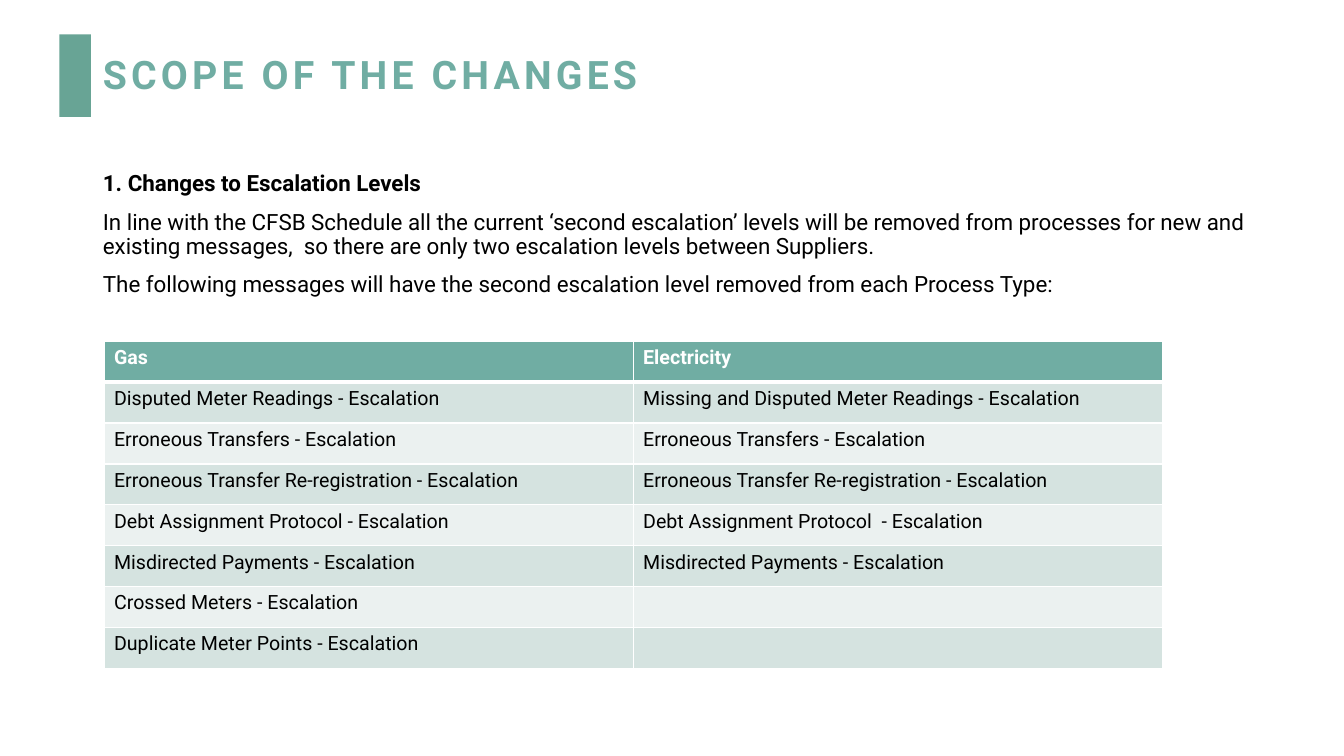
from itertools import zip_longest

from pptx import Presentation
from pptx.dml.color import RGBColor
from pptx.enum.shapes import MSO_SHAPE as Shape
from pptx.enum.text import MSO_ANCHOR as Anchor, MSO_AUTO_SIZE as AutoSize, PP_ALIGN as Align
from pptx.oxml import parse_xml
from pptx.oxml.ns import nsdecls
from pptx.util import Cm, Pt

TEAL = "70ADA3"
BAR_GREEN = "68A495"
BAND_DARK = "D5E3E0"
BAND_LIGHT = "EBF1F0"
WHITE = "FFFFFF"
BLACK = "000000"

GAS = [
    "Disputed Meter Readings - Escalation",
    "Erroneous Transfers - Escalation",
    "Erroneous Transfer Re-registration - Escalation",
    "Debt Assignment Protocol - Escalation",
    "Misdirected Payments - Escalation",
    "Crossed Meters - Escalation",
    "Duplicate Meter Points - Escalation",
]
ELECTRICITY = [
    "Missing and Disputed Meter Readings - Escalation",
    "Erroneous Transfers - Escalation",
    "Erroneous Transfer Re-registration - Escalation",
    "Debt Assignment Protocol  - Escalation",
    "Misdirected Payments - Escalation",
]
SCOPE = [
    "1. Changes to Escalation Levels",
    "In line with the CFSB Schedule all the current ‘second escalation’ levels will be "
    "removed from processes for new and existing messages,  so there are only two "
    "escalation levels between Suppliers.",
    "The following messages will have the second escalation level removed from each "
    "Process Type:",
]


def color(value):
    return RGBColor.from_string(value)


class ScopeSlide:
    font_name = "Roboto"

    def __init__(self, deck):
        self.slide = deck.slides.add_slide(deck.slide_layouts[1])

    def place(self, shape, left, top, width, height):
        shape.left, shape.top = Cm(left), Cm(top)
        shape.width, shape.height = Cm(width), Cm(height)

    def style(self, paragraph, size, ink, bold=False):
        font = paragraph.font
        font.name, font.size, font.bold = self.font_name, Pt(size), bold
        font.color.rgb = color(ink)

    def bar(self, left, top, width, height):
        bar = self.slide.shapes.add_shape(
            Shape.RECTANGLE, Cm(left), Cm(top), Cm(width), Cm(height))
        bar.shadow.inherit = False
        bar.fill.solid()
        bar.fill.fore_color.rgb = color(BAR_GREEN)
        bar.line.fill.background()

    def title(self, text, *box):
        title = self.slide.shapes.title
        self.place(title, *box)
        frame = title.text_frame
        frame.text = text
        frame.auto_size = AutoSize.NONE
        frame.vertical_anchor = Anchor.MIDDLE
        heading = frame.paragraphs[0]
        heading.alignment = Align.LEFT
        heading.line_spacing = 0.9
        self.style(heading, 28, TEAL, True)
        heading.runs[0].font._element.set("spc", "300")

    def body(self, texts, *box):
        body = self.slide.placeholders[1]
        self.place(body, *box)
        frame = body.text_frame
        frame.text = "\n".join(texts)
        frame.auto_size = AutoSize.NONE
        for index, paragraph in enumerate(frame.paragraphs):
            properties = paragraph._p.get_or_add_pPr()
            properties.set("marL", "0")
            properties.set("indent", "0")
            properties.append(parse_xml(f"<a:buNone {nsdecls('a')}/>"))
            paragraph.line_spacing = 0.9
            paragraph.space_before = Pt(10 if index else 0)
            self.style(paragraph, 16, BLACK, bold=index == 0)

    def borders(self, cell, **widths):
        properties = cell._tc.get_or_add_tcPr()
        for side in "LRTB":
            width = Pt(widths.get(side, 1))
            properties.append(parse_xml(
                f'<a:ln{side} {nsdecls("a")} w="{width}"><a:solidFill>'
                f'<a:srgbClr val="{WHITE}"/></a:solidFill></a:ln{side}>'))

    def table(self, rows, left, top, width, height):
        table = self.slide.shapes.add_table(
            len(rows), len(rows[0]), Cm(left), Cm(top), Cm(width), Cm(height)).table
        for row, texts in enumerate(rows):
            header = row == 0
            band = TEAL if header else BAND_DARK if row % 2 else BAND_LIGHT
            for column, text in enumerate(texts):
                cell = table.cell(row, column)
                cell.text = text
                self.borders(cell, T=3 if row == 1 else 1, B=3 if header else 1)
                cell.fill.solid()
                cell.fill.fore_color.rgb = color(band)
                self.style(cell.text_frame.paragraphs[0], 14,
                           WHITE if header else BLACK, header)


def main():
    deck = Presentation()
    deck.slide_width, deck.slide_height = Cm(33.87), Cm(19.05)
    scope = ScopeSlide(deck)
    scope.bar(1.5, 0.87, 0.79, 2.08)
    scope.title("SCOPE OF THE CHANGES", 2.34, 1.02, 25.78, 1.83)
    scope.body(SCOPE, 2.34, 4.22, 30.2, 7.04)
    messages = zip_longest(GAS, ELECTRICITY, fillvalue="")
    scope.table([("Gas", "Electricity"), *messages], 2.62, 8.6, 26.67, 8.24)
    deck.save("out.pptx")


if __name__ == "__main__":
    main()
